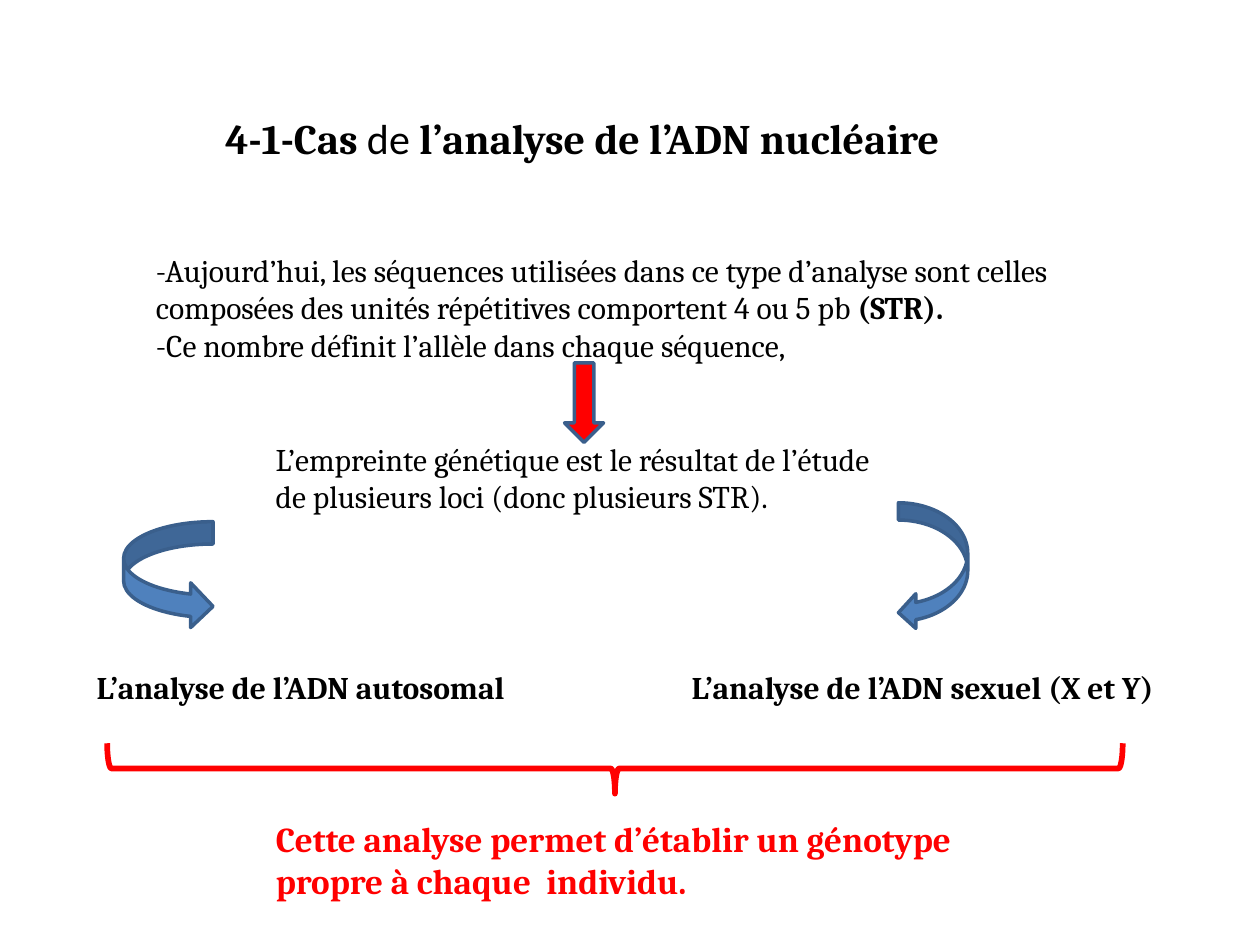
from pptx import Presentation
from pptx.dml.color import RGBColor
from pptx.enum.shapes import MSO_SHAPE as Kind
from pptx.util import Pt


def rgb(code):
    return RGBColor.from_string(code)


BLACK, RED = "000000", "FF0000"
BLUE, EDGE = "4F81BD", "3A5F8C"


class Page:
    font = "Cambria"

    def __init__(self, deck):
        self.slide = deck.slides.add_slide(deck.slide_layouts[6])

    def text(self, box, *paras, size=18, color=BLACK):
        """Add a text box; each paragraph is a list of (words, bold[, font])."""
        frame = self.slide.shapes.add_textbox(*map(Pt, box)).text_frame
        frame.word_wrap = True
        for i, parts in enumerate(paras):
            para = frame.paragraphs[0] if i == 0 else frame.add_paragraph()
            for words, bold, *font in parts:
                run = para.add_run()
                run.text = words
                run.font.name = font[0] if font else self.font
                run.font.size = Pt(size)
                run.font.bold = bold
                run.font.color.rgb = rgb(color)

    def shape(self, kind, box, fill=None, line=EDGE, width=2, turn=0):
        item = self.slide.shapes.add_shape(kind, *map(Pt, box))
        item.shadow.inherit = False
        item.rotation = turn
        if fill:
            item.fill.solid()
            item.fill.fore_color.rgb = rgb(fill)
        else:
            item.fill.background()
        item.line.color.rgb = rgb(line)
        item.line.width = Pt(width)


def main():
    deck = Presentation()
    deck.slide_width, deck.slide_height = Pt(720), Pt(540)
    page = Page(deck)

    page.text((121.7, 60.5, 453.6, 36),
              [("4-1-Cas ", True), ("de ", False, "Calibri"),
               ("l’analyse de l’ADN nucléaire", True)], size=24)
    page.text((82, 139.7, 538.6, 72.7),
              [("-Aujourd’hui, les séquences utilisées dans ce type d’analyse "
                "sont celles composées des unités répétitives comportent "
                "4 ou 5 pb ", False), ("(STR).", True)],
              [("-Ce nombre définit l’allèle dans chaque séquence,", False)])
    page.text((150.5, 247.7, 362.9, 51),
              [("L’empreinte génétique est le résultat de l’étude "
                "de plusieurs loci (donc plusieurs STR).", False)])
    for left, width, words in (
            (48.2, 272.2, "L’analyse de l’ADN autosomal"),
            (388.1, 283.7, "L’analyse de l’ADN sexuel (X et Y)")):
        page.text((left, 378, width, 29), [(words, True)])

    page.shape(Kind.DOWN_ARROW, (322.6, 207.4, 22.3, 45.4), RED)
    page.shape(Kind.CURVED_LEFT_ARROW, (513.4, 287.3, 39.6, 72.7), BLUE)
    page.shape(Kind.CURVED_RIGHT_ARROW, (70.6, 298.1, 51.1, 61.2), BLUE)

    page.text((150.5, 463.7, 425.5, 55.4),
              [("Cette analyse permet d’établir un génotype "
                "propre à chaque  individu.", True)], size=20, color=RED)
    page.shape(Kind.RIGHT_BRACE, (337, 149, 28.8, 580.3),
               line=RED, width=3.25, turn=90)

    deck.save("out.pptx")


if __name__ == "__main__":
    main()
